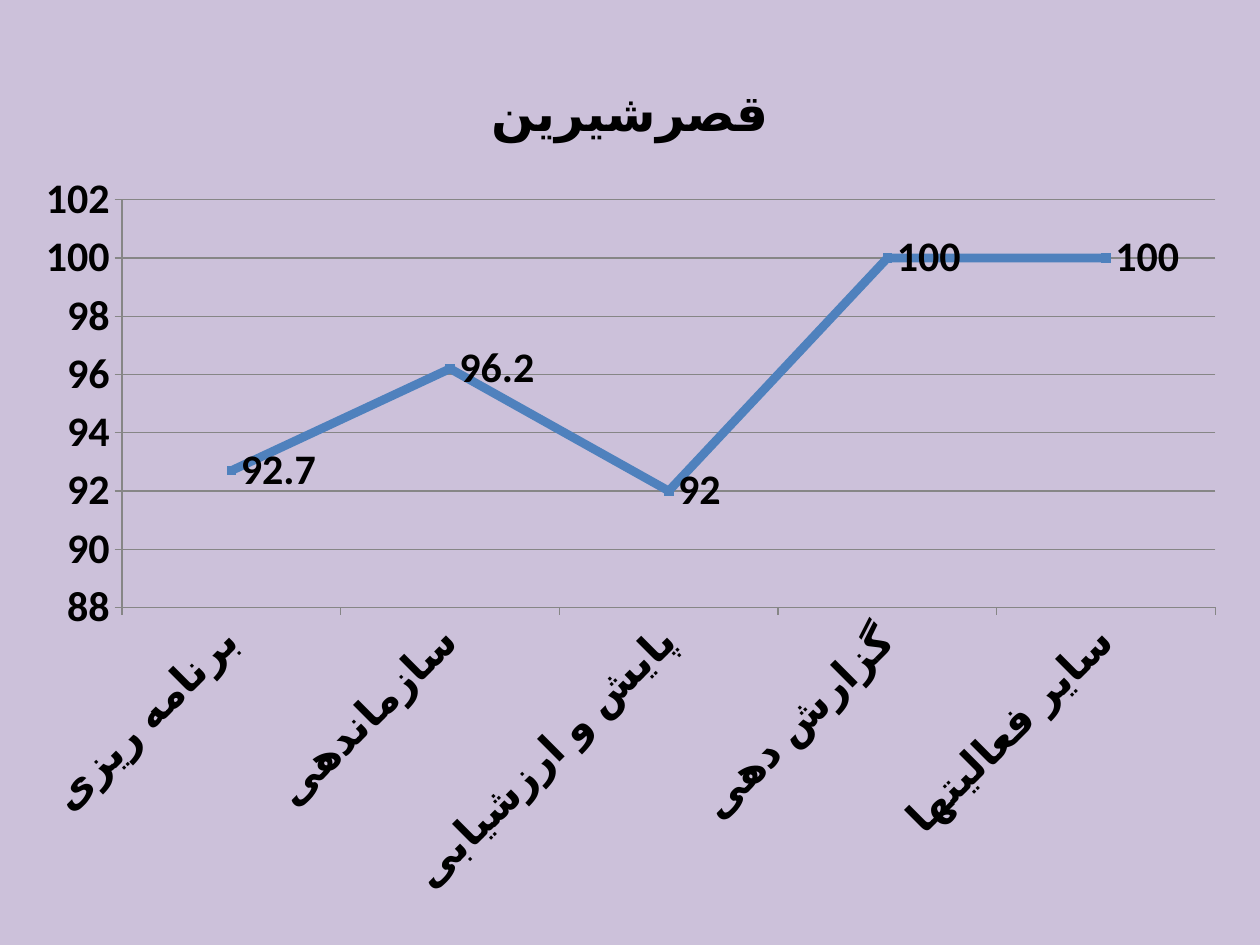
from pptx import Presentation
from pptx import util as u
from pptx.chart import data
from pptx.dml.color import RGBColor
from pptx.enum import chart as ch

LILAC = RGBColor(0xCC, 0xC1, 0xDA)
BLUE = RGBColor(0x4F, 0x81, 0xBD)
GRAY = RGBColor(0x86, 0x86, 0x86)
BLACK = RGBColor(0, 0, 0)

DISTRICT = "قصرشیرین"
SCORES = {
    "برنامه ریزی": 92.7,
    "سازماندهی": 96.2,
    "پایش و ارزشیابی": 92,
    "گزارش دهی": 100,
    "سایر فعالیتها": 100,
}


def apply(target, values):
    for name, value in values.items():
        setattr(target, name, value)


class ScorePage:
    """Holds the style and the current slide of a score chart."""

    font = {"name": "Calibri", "size": u.Pt(24), "bold": True}

    def __init__(self, deck):
        self.page = deck.slides.add_slide(deck.slide_layouts[6])
        fill = self.page.background.fill
        fill.solid()
        fill.fore_color.rgb = LILAC

    def style_font(self, font, **changes):
        apply(font, {**self.font, **changes})
        font.color.rgb = BLACK

    def style_line(self, line, color, width):
        line.color.rgb = color
        line.width = u.Pt(width)

    def add_line_chart(self, title, scores, left, top, width, height):
        source = data.CategoryChartData()
        source.categories = list(scores)
        source.add_series(title, list(scores.values()))
        box = [u.Inches(length) for length in (left, top, width, height)]
        frame = self.page.shapes.add_chart(
            ch.XL_CHART_TYPE.LINE_MARKERS, *box, source)
        chart = frame.chart
        chart.has_legend = False
        self.style_font(chart.font)
        self.add_title(chart, title)
        self.style_axes(chart)
        self.style_series(chart.plots[0])

    def add_title(self, chart, title):
        chart.has_title = True
        para = chart.chart_title.text_frame.paragraphs[0]
        span = para.add_run()
        span.text = title
        self.style_font(span.font, size=u.Pt(28.8))
        chart.chart_title.include_in_layout = False

    def style_axes(self, chart):
        scores, activities = chart.value_axis, chart.category_axis
        for axis in (scores, activities):
            apply(axis, {"major_tick_mark": ch.XL_TICK_MARK.OUTSIDE,
                         "minor_tick_mark": ch.XL_TICK_MARK.NONE})
            self.style_line(axis.format.line, GRAY, 0.75)
            self.style_font(axis.tick_labels.font)
        apply(scores, {"minimum_scale": 88, "maximum_scale": 102,
                       "major_unit": 2, "has_major_gridlines": True})
        self.style_line(scores.major_gridlines.format.line, GRAY, 0.75)
        body = activities._element.txPr.bodyPr
        body.set("rot", "-2700000")
        body.set("vert", "horz")

    def style_series(self, plot):
        plot.vary_by_categories = False
        series = plot.series[0]
        series.smooth = False
        self.style_line(series.format.line, BLUE, 5)
        marker = series.marker
        apply(marker, {"style": ch.XL_MARKER_STYLE.SQUARE, "size": 5})
        marker.format.fill.solid()
        marker.format.fill.fore_color.rgb = BLUE
        self.style_line(marker.format.line, BLUE, 0.75)
        labels = series.data_labels
        apply(labels, {"show_value": True,
                       "position": ch.XL_LABEL_POSITION.RIGHT})
        self.style_font(labels.font)


def main():
    deck = Presentation()
    apply(deck, {"slide_width": u.Inches(10), "slide_height": u.Inches(7.5)})
    ScorePage(deck).add_line_chart(DISTRICT, SCORES, 0.17, 0.42, 9.67, 6.83)
    deck.save("out.pptx")


if __name__ == "__main__":
    main()
